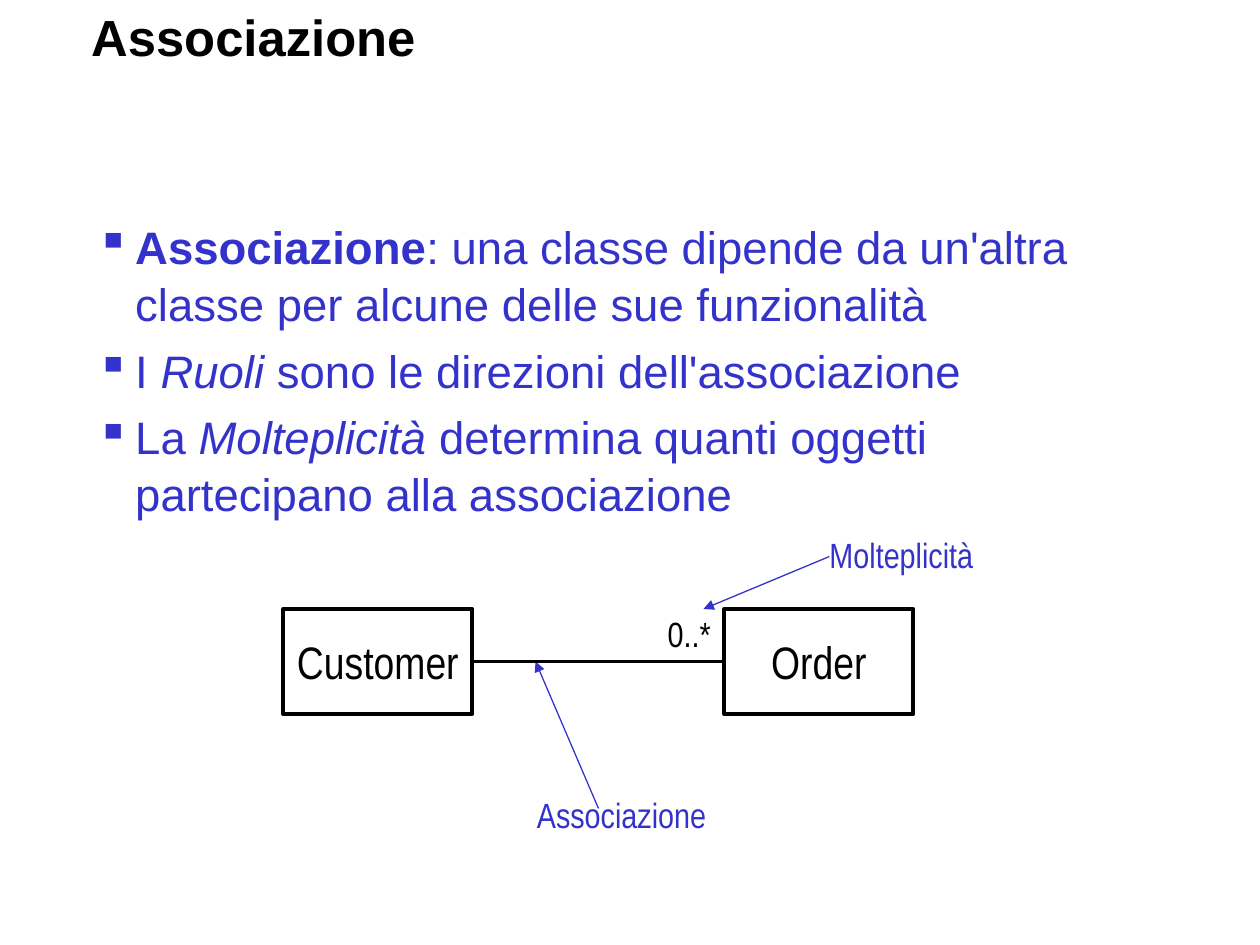
from pptx import Presentation
from pptx.dml.color import RGBColor
from pptx.enum.shapes import MSO_CONNECTOR as Connector, MSO_SHAPE as Shape
from pptx.enum.text import MSO_ANCHOR as Anchor, MSO_AUTO_SIZE as AutoSize, PP_ALIGN as Align
from pptx.oxml.ns import qn
from pptx.util import Emu, Pt
from lxml.etree import SubElement

EMU_PER_PX = 7620
COLORS = {"ink": "000000", "accent": "3333CC", "paper": "FFFFFF"}
FORMATS = {
    "title": {"name": "Arial", "size": Pt(29), "bold": True},
    "body": {"name": "Arial", "size": Pt(26)},
    "class": {"name": "Arial Narrow", "size": Pt(26)},
    "label": {"name": "Arial Narrow", "size": Pt(20)},
}
BULLETS = [
    [("Associazione", {"bold": True}),
     (": una classe dipende da un'altra classe per alcune delle sue funzionalità", {})],
    [("I ", {}), ("Ruoli", {"italic": True}), (" sono le direzioni dell'associazione", {})],
    [("La ", {}), ("Molteplicità", {"italic": True}),
     (" determina quanti oggetti partecipano alla associazione", {})],
]
LABELS = [
    ("0..*", (624, 577, 65, 52), "ink"),
    ("Associazione", (499, 750, 186, 52), "accent"),
    ("Molteplicità", (778, 502, 161, 52), "accent"),
]
CLASS_TOP, CLASS_WIDTH, CLASS_HEIGHT = 580, 180, 100


def px(value):
    return Emu(value * EMU_PER_PX)


def rgb(color):
    return RGBColor.from_string(COLORS[color])


def set_attributes(target, values):
    for name, value in values.items():
        setattr(target, name, value)


def add_run(paragraph, text, style, color, extra=None):
    run = paragraph.add_run()
    run.text = text
    set_attributes(run.font, {**FORMATS[style], **(extra or {})})
    run.font.color.rgb = rgb(color)


def add_text(slide, box, wrap=True):
    frame = slide.shapes.add_textbox(*map(px, box)).text_frame
    frame.word_wrap = wrap
    return frame


def add_title(slide, text, box):
    frame = add_text(slide, box)
    frame.vertical_anchor = Anchor.MIDDLE
    add_run(frame.paragraphs[0], text, "title", "ink")


def add_bullets(slide, items, box):
    frame = add_text(slide, box)
    for index, runs in enumerate(items):
        paragraph = frame.add_paragraph() if index else frame.paragraphs[0]
        properties = paragraph._p.get_or_add_pPr()
        properties.set("marL", str(px(37)))
        properties.set("indent", str(px(-37)))
        SubElement(properties, qn("a:buChar"), char="▪")
        paragraph.line_spacing = 1.05
        if index:
            paragraph.space_before = Pt(5.2)
        for text, extra in runs:
            add_run(paragraph, text, "body", "accent", extra)


def add_label(slide, text, box, color):
    frame = add_text(slide, box, wrap=False)
    frame.auto_size = AutoSize.SHAPE_TO_FIT_TEXT
    frame.paragraphs[0].alignment = Align.CENTER
    add_run(frame.paragraphs[0], text, "label", color)


def add_class(slide, name, left):
    box = (left, CLASS_TOP, CLASS_WIDTH, CLASS_HEIGHT)
    shape = slide.shapes.add_shape(Shape.RECTANGLE, *map(px, box))
    shape.shadow.inherit = False
    shape.fill.solid()
    shape.fill.fore_color.rgb = rgb("paper")
    shape.line.color.rgb = rgb("ink")
    shape.line.width = Pt(2.25)
    frame = shape.text_frame
    set_attributes(frame, {"word_wrap": False, "vertical_anchor": Anchor.MIDDLE})
    frame.paragraphs[0].alignment = Align.CENTER
    add_run(frame.paragraphs[0], name, "class", "ink")
    return shape


def add_line(slide, points, color, width):
    connector = slide.shapes.add_connector(Connector.STRAIGHT, *map(px, points))
    connector.line.color.rgb = rgb(color)
    connector.line.width = Pt(width)
    SubElement(connector._element.spPr, qn("a:effectLst"))
    return connector


def add_arrow(slide, points):
    connector = add_line(slide, points, "accent", 0.75)
    SubElement(connector.line._get_or_add_ln(), qn("a:tailEnd"), type="triangle")


def main():
    presentation = Presentation()
    presentation.slide_width, presentation.slide_height = px(1200), px(900)
    slide = presentation.slides.add_slide(presentation.slide_layouts[6])

    add_arrow(slide, (570, 770, 510, 630))
    add_title(slide, "Associazione", (75, 10, 1055, 49))
    add_bullets(slide, BULLETS, (80, 200, 980, 540))
    customer = add_class(slide, "Customer", 270)
    order = add_class(slide, "Order", 690)
    association = add_line(slide, (450, 630, 690, 630), "ink", 2.25)
    association.begin_connect(customer, 3)
    association.end_connect(order, 1)
    add_arrow(slide, (790, 530, 670, 580))
    for text, box, color in LABELS:
        add_label(slide, text, box, color)

    presentation.save("out.pptx")


if __name__ == "__main__":
    main()
